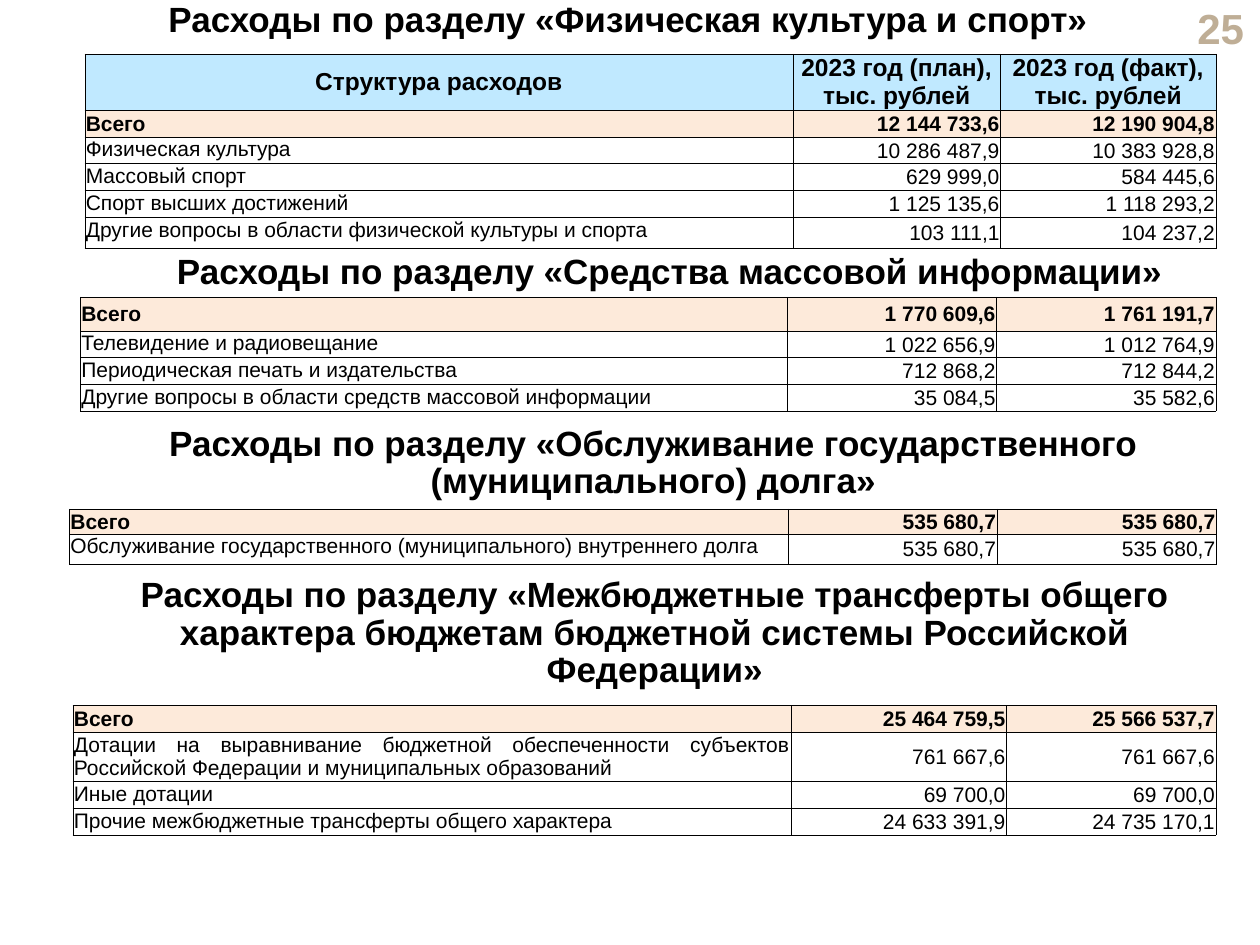
from lxml.etree import SubElement
from pptx import Presentation
from pptx.dml.color import RGBColor
from pptx.enum.text import MSO_ANCHOR, MSO_AUTO_SIZE, PP_ALIGN
from pptx.oxml.ns import qn
from pptx.util import Cm, Pt

HEADER = ["Структура расходов", "2023 год (план),\nтыс. рублей", "2023 год (факт),\nтыс. рублей"]
SPORT = [
    ["Всего", "12 144 733,6", "12 190 904,8"],
    ["Физическая культура", "10 286 487,9", "10 383 928,8"],
    ["Массовый спорт", "629 999,0", "584 445,6"],
    ["Спорт высших достижений", "1 125 135,6", "1 118 293,2"],
    ["Другие вопросы в области физической культуры и спорта", "103 111,1", "104 237,2"],
]
MEDIA = [
    ["Всего", "1 770 609,6", "1 761 191,7"],
    ["Телевидение и радиовещание", "1 022 656,9", "1 012 764,9"],
    ["Периодическая печать и издательства", "712 868,2", "712 844,2"],
    ["Другие вопросы в области средств массовой информации", "35 084,5", "35 582,6"],
]
DEBT = [
    ["Всего", "535 680,7", "535 680,7"],
    ["Обслуживание государственного (муниципального) внутреннего долга", "535 680,7", "535 680,7"],
]
TRANSFERS = [
    ["Всего", "25 464 759,5", "25 566 537,7"],
    ["Дотации на выравнивание бюджетной обеспеченности субъектов Российской Федерации "
     "и муниципальных образований", "761 667,6", "761 667,6"],
    ["Иные дотации", "69 700,0", "69 700,0"],
    ["Прочие межбюджетные трансферты общего характера", "24 633 391,9", "24 735 170,1"],
]


def color(value):
    return RGBColor.from_string(value)


class BudgetPage:
    font_name = "Arial"
    ink = "000000"
    number_color = "BFAE96"
    header_fill = "C0E9FF"
    total_fill = "FDEADA"
    row_fill = "FFFFFF"

    def __init__(self, page):
        self.page = page

    def add_text(self, para, text, size, bold=True, ink=ink):
        for index, line in enumerate(text.split("\n")):
            if index:
                para.add_line_break()
            span = para.add_run()
            span.text = line
            span.font.name = self.font_name
            span.font.size = Pt(size)
            span.font.bold = bold
            span.font.color.rgb = color(ink)

    def fill_box(self, box, place, text, size, align, anchor, ink=ink):
        box.left, box.top, box.width, box.height = [Cm(length) for length in place]
        frame = box.text_frame
        frame.word_wrap = True
        frame.auto_size = MSO_AUTO_SIZE.NONE
        frame.vertical_anchor = anchor
        para = frame.paragraphs[0]
        para.alignment = align
        self.add_text(para, text, size, ink=ink)
        return para

    def text_box(self):
        return self.page.shapes.add_textbox(0, 0, 0, 0)

    def number(self, text, place):
        self.fill_box(self.text_box(), place, text, 24, PP_ALIGN.RIGHT,
                      MSO_ANCHOR.MIDDLE, self.number_color)

    def heading(self, text, place, box=None):
        para = self.fill_box(box or self.text_box(), place, text, 20,
                             PP_ALIGN.CENTER, MSO_ANCHOR.TOP)
        para.line_spacing = 0.9
        para.space_before = Pt(0)

    def cell(self, cell, text, size, bold, align, anchor, fill, inset, top_inset):
        properties = cell._tc.get_or_add_tcPr()
        for side in ("a:lnL", "a:lnR", "a:lnT", "a:lnB"):
            border = SubElement(properties, qn(side), w=str(Pt(0.25)))
            solid = SubElement(border, qn("a:solidFill"))
            SubElement(solid, qn("a:srgbClr"), val=self.ink)
        cell.fill.solid()
        cell.fill.fore_color.rgb = color(fill)
        cell.margin_left = cell.margin_right = Cm(inset)
        cell.margin_top, cell.margin_bottom = Cm(top_inset), Cm(0)
        cell.vertical_anchor = anchor
        para = cell.text_frame.paragraphs[0]
        para.alignment = align
        self.add_text(para, text, size, bold)

    def table(self, rows, left, top, widths, heights, header=None, justified=()):
        lines = ([header] if header else []) + rows
        frame = self.page.shapes.add_table(len(lines), len(widths), Cm(left), Cm(top),
                                           Cm(sum(widths)), Cm(sum(heights)))
        table = frame.table
        table.first_row = table.horz_banding = False
        for column, width in zip(table.columns, widths):
            column.width = Cm(width)
        for row, height in zip(table.rows, heights):
            row.height = Cm(height)

        for row, line in enumerate(lines):
            is_header = line is header
            is_total = line is rows[0]
            for column, text in enumerate(line):
                cell = table.cell(row, column)
                if is_header:
                    self.cell(cell, text, 14, True, PP_ALIGN.CENTER, MSO_ANCHOR.MIDDLE,
                              self.header_fill, 0.1, 0)
                    continue
                align = PP_ALIGN.RIGHT
                if column == 0:
                    align = PP_ALIGN.JUSTIFY if line in justified else PP_ALIGN.LEFT
                anchor = MSO_ANCHOR.MIDDLE if column or is_total else MSO_ANCHOR.TOP
                fill = self.total_fill if is_total else self.row_fill
                self.cell(cell, text, 12, is_total, align, anchor, fill, 0.02, 0.02)


def main():
    deck = Presentation()
    deck.slide_width, deck.slide_height = Cm(25.4), Cm(19.05)
    page = deck.slides.add_slide(deck.slide_layouts[5])
    budget = BudgetPage(page)

    budget.number("25", (23.7, 0.13, 1.63, 0.86))

    # Sport
    budget.heading("Расходы по разделу «Физическая культура и спорт»",
                   (1.42, -0.08, 22.48, 1.19), page.shapes.title)
    budget.table(SPORT, 1.71, 1.09, [14.27, 4.19, 4.34], [1.13] + [0.54] * 4 + [0.63],
                 header=HEADER, justified=SPORT[-1:])

    # Mass media
    budget.heading("Расходы по разделу «Средства массовой информации»",
                   (1.7, 5, 23.6, 1.57))
    budget.table(MEDIA, 1.62, 5.99, [14.25, 4.22, 4.42], [0.68] + [0.54] * 3)

    # Public debt
    budget.heading("Расходы по разделу «Обслуживание государственного (муниципального) долга»",
                   (1.93, 8.46, 22.48, 1.27))
    budget.table(DEBT, 1.4, 10.26, [14.48, 4.22, 4.42], [0.5, 0.61], justified=DEBT[1:])

    # Transfers between budgets
    budget.heading("Расходы по разделу «Межбюджетные трансферты общего характера "
                   "бюджетам бюджетной системы Российской Федерации»",
                   (1.35, 11.51, 23.7, 1.57))
    budget.table(TRANSFERS, 1.47, 14.22, [14.48, 4.34, 4.22], [0.54, 0.99, 0.54, 0.54],
                 justified=TRANSFERS[1:])

    deck.save("out.pptx")


if __name__ == "__main__":
    main()
